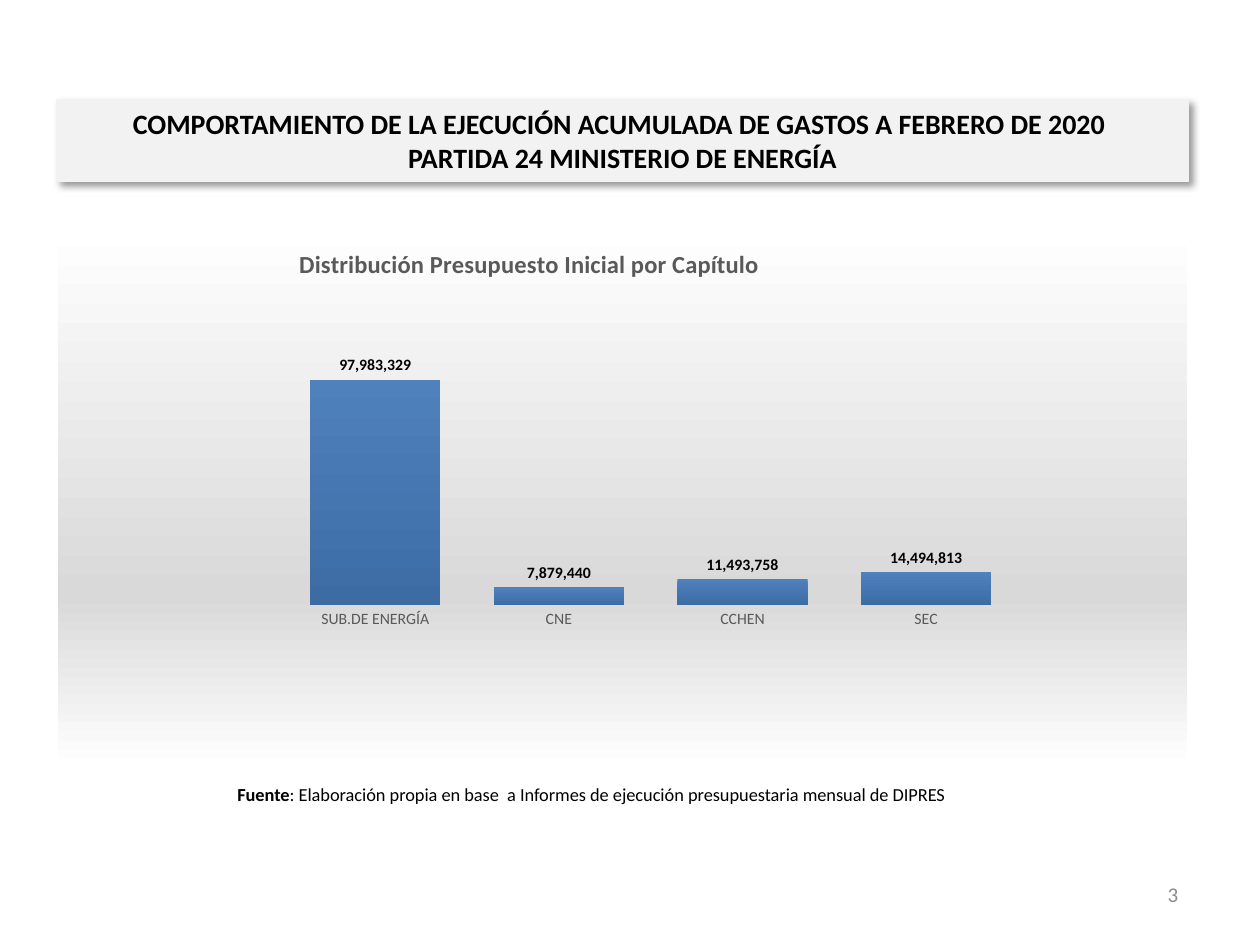
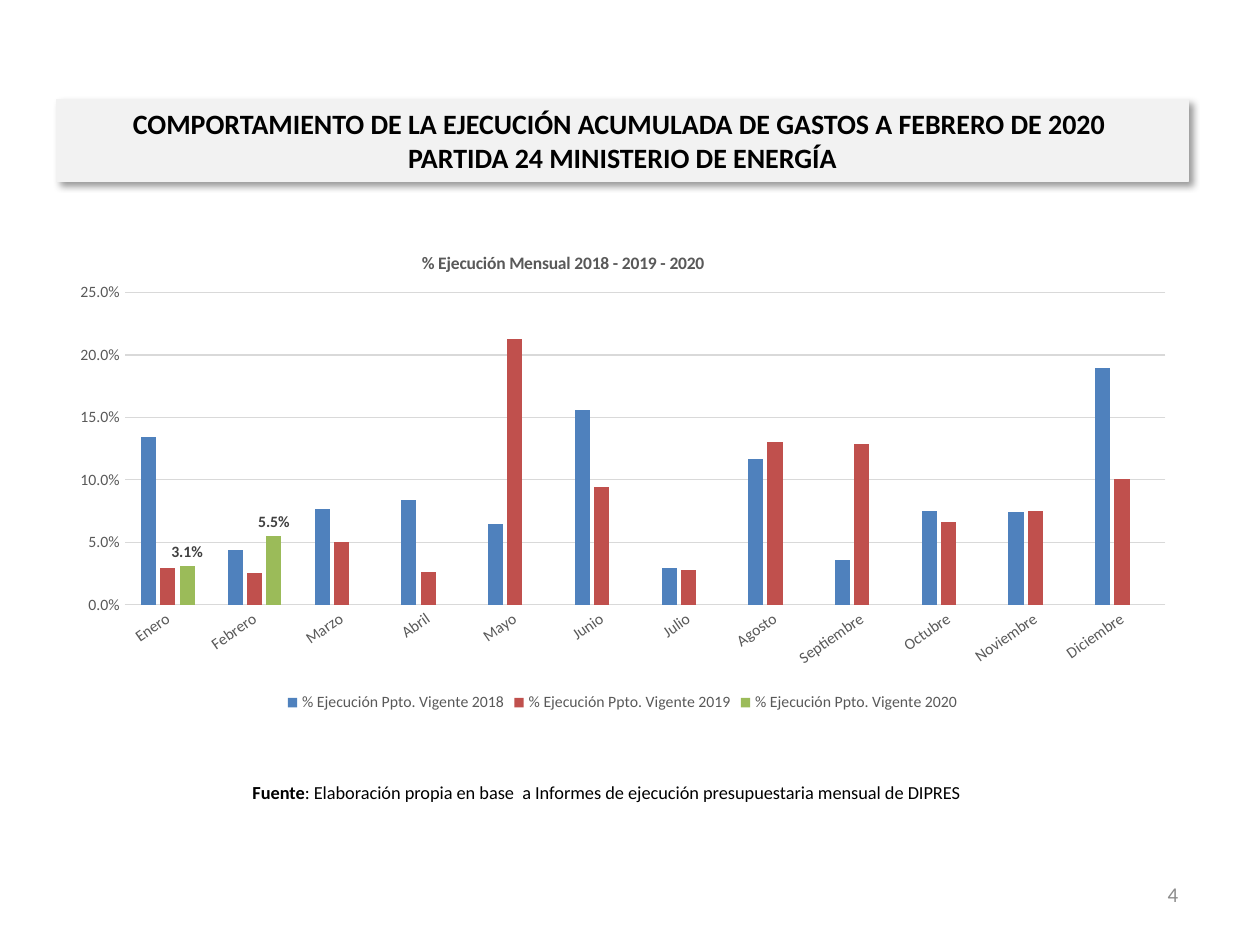
from lxml import etree
from pptx import Presentation
from pptx.chart.data import CategoryChartData
from pptx.dml.color import RGBColor
from pptx.enum.chart import XL_CHART_TYPE as ChartType
from pptx.enum.chart import XL_LABEL_POSITION as LabelPosition
from pptx.enum.chart import XL_LEGEND_POSITION as LegendPosition
from pptx.enum.chart import XL_TICK_MARK as TickMark
from pptx.enum.shapes import MSO_SHAPE as Shape
from pptx.enum.text import MSO_ANCHOR as Anchor
from pptx.enum.text import PP_ALIGN as Align
from pptx.oxml import parse_xml
from pptx.oxml.ns import qn
from pptx.util import Inches, Pt

FONT = "Calibri"
BLACK, GRAY, GRID, BAND = "000000", "595959", "D9D9D9", "F2F2F2"
BLUE, DARK_BLUE, RED, GREEN = "4F81BD", "3D6CA4", "C0504D", "9BBB59"
LEFT, WIDTH = 0.45, 8.98
NAMESPACES = ('xmlns:a="http://schemas.openxmlformats.org/drawingml/2006/main" '
              'xmlns:c="http://schemas.openxmlformats.org/drawingml/2006/chart"')

TITLE = ("COMPORTAMIENTO DE LA EJECUCIÓN ACUMULADA DE GASTOS A FEBRERO DE 2020 ",
         "PARTIDA 24 MINISTERIO DE ENERGÍA")
SOURCE = ("Fuente", ": Elaboración propia en base  a Informes de ejecución "
                    "presupuestaria mensual de DIPRES")

CHAPTERS = {"SUB.DE ENERGÍA": 97983329, "CNE": 7879440,
            "CCHEN": 11493758, "SEC": 14494813}
MONTHS = ["Enero", "Febrero", "Marzo", "Abril", "Mayo", "Junio", "Julio",
          "Agosto", "Septiembre", "Octubre", "Noviembre", "Diciembre"]
EXECUTION = {
    2018: [0.134, 0.044, 0.077, 0.084, 0.065, 0.156,
           0.029, 0.117, 0.036, 0.075, 0.074, 0.19],
    2019: [0.029, 0.025, 0.05, 0.026, 0.213, 0.094,
           0.028, 0.13, 0.129, 0.066, 0.075, 0.101],
    2020: [0.031, 0.055] + [None] * 10,
}


def color(value):
    return RGBColor.from_string(value)


class Deck:
    """Holds the shared style and the current slide."""

    def __init__(self):
        self.presentation = Presentation()
        self.presentation.slide_width = Inches(10)
        self.presentation.slide_height = Inches(7.5)
        self.slide = None

    # Style helpers
    def style(self, font, size, hex_color, bold=False):
        values = {"name": FONT, "size": Pt(size), "bold": bold}
        for name, value in values.items():
            setattr(font, name, value)
        font.color.rgb = color(hex_color)

    def line(self, line, hex_color):
        line.color.rgb = color(hex_color)
        line.width = Pt(0.75)

    def box(self, left, top, width, height):
        return [Inches(value) for value in (left, top, width, height)]

    def run(self, paragraph, text, size, hex_color, bold=False):
        run = paragraph.add_run()
        run.text = text
        self.style(run.font, size, hex_color, bold)

    # Slide frame: title band and page number
    def new_slide(self, number):
        self.slide = self.presentation.slides.add_slide(
            self.presentation.slide_layouts[6])
        self.text((7.12, 6.9, 2.33, 0.4), Align.RIGHT,
                  [(str(number), 12, "8C8C8C")])
        self.title_band()

    def title_band(self):
        band = self.slide.shapes.add_shape(
            Shape.RECTANGLE, *self.box(LEFT, 0.79, WIDTH, 0.65))
        band.fill.solid()
        band.fill.fore_color.rgb = color(BAND)
        self.line(band.line, BAND)
        band.shadow.inherit = False
        effects = band._element.spPr.find(qn("a:effectLst"))
        effects.append(parse_xml(
            f'<a:outerShdw {NAMESPACES} blurRad="{Pt(4)}" dist="{Pt(3)}" '
            'dir="2700000" algn="tl" rotWithShape="0"><a:srgbClr val="000000">'
            '<a:alpha val="40000"/></a:srgbClr></a:outerShdw>'))
        band.text_frame.word_wrap = True
        band.text_frame.vertical_anchor = Anchor.MIDDLE
        paragraph = band.text_frame.paragraphs[0]
        paragraph.alignment = Align.CENTER
        self.run(paragraph, TITLE[0], 16, BLACK, True)
        paragraph.add_line_break()
        self.run(paragraph, TITLE[1], 16, BLACK, True)

    def text(self, place, alignment, runs):
        frame = self.slide.shapes.add_textbox(*self.box(*place)).text_frame
        frame.word_wrap = True
        frame.vertical_anchor = Anchor.MIDDLE
        paragraph = frame.paragraphs[0]
        paragraph.alignment = alignment
        for run in runs:
            self.run(paragraph, *run)

    def source_note(self, top, width):
        self.text((0.98, top, width, 0.4), Align.CENTER,
                  [(SOURCE[0], 10.5, BLACK, True), (SOURCE[1], 10.5, BLACK)])

    # Charts
    def layout(self, parent, index, inner=False, **fractions):
        for old in parent.findall(qn("c:layout")):
            parent.remove(old)
        layout = parse_xml(f"<c:layout {NAMESPACES}><c:manualLayout/></c:layout>")
        settings = {"layoutTarget": "inner"} if inner else {}
        settings |= {"xMode": "edge", "yMode": "edge"} | fractions
        for name, value in settings.items():
            etree.SubElement(layout[0], qn(f"c:{name}")).set("val", str(value))
        parent.insert(index, layout)

    def column_chart(self, place, categories, series, number_format, title,
                     title_size, title_at, plot_at, gap, overlap=0):
        data = CategoryChartData(number_format=number_format)
        data.categories = categories
        for name, values in series.items():
            data.add_series(name, values)
        chart = self.slide.shapes.add_chart(
            ChartType.COLUMN_CLUSTERED, *self.box(*place), data).chart
        self.style(chart.font, 10, BLACK)
        chart.has_legend = False
        chart.has_title = True
        self.run(chart.chart_title.text_frame.paragraphs[0],
                 title, title_size, GRAY, True)
        self.layout(chart.chart_title._element, 1, x=title_at[0], y=title_at[1])
        self.layout(chart._chartSpace.chart.plotArea, 0, inner=True,
                    **dict(zip("xywh", plot_at)))
        plot = chart.plots[0]
        for name, value in {"gap_width": gap, "overlap": overlap,
                            "vary_by_categories": False}.items():
            setattr(plot, name, value)
        for axis in (chart.category_axis, chart.value_axis):
            axis.major_tick_mark = axis.minor_tick_mark = TickMark.NONE
            axis.format.line.fill.background()
            self.style(axis.tick_labels.font, 9, GRAY)
        axis.has_major_gridlines = False
        axis.minimum_scale = 0
        axis.tick_labels.number_format = number_format
        axis.tick_labels.number_format_is_linked = False
        return chart

    def value_labels(self, series, number_format, hex_color):
        labels = series.data_labels
        for name, value in {"show_value": True, "number_format": number_format,
                            "number_format_is_linked": False,
                            "position": LabelPosition.OUTSIDE_END}.items():
            setattr(labels, name, value)
        self.style(labels.font, 9, hex_color, True)

    def chart_background(self, chart, stops):
        stop_xml = "".join(
            f'<a:gs pos="{position * 1000}"><a:srgbClr val="{value}"/></a:gs>'
            for position, value in stops)
        chart._chartSpace.chart.addnext(parse_xml(
            f"<c:spPr {NAMESPACES}><a:gradFill><a:gsLst>{stop_xml}</a:gsLst>"
            '<a:lin ang="5400000" scaled="0"/></a:gradFill><a:ln w="9525">'
            '<a:solidFill><a:srgbClr val="FFFFFF"/></a:solidFill></a:ln></c:spPr>'))

    def legend(self, chart):
        chart.has_legend = True
        chart.legend.position = LegendPosition.BOTTOM
        chart.legend.include_in_layout = False
        self.style(chart.legend.font, 9, GRAY)


def budget_slide(deck):
    deck.new_slide(3)
    deck.source_note(6.1, 7.43)
    chart = deck.column_chart(
        (LEFT, 1.79, WIDTH, 4.31), list(CHAPTERS),
        {"Presupuesto Inicial": list(CHAPTERS.values())}, "#,##0",
        "Distribución Presupuesto Inicial por Capítulo", 14,
        title_at=(0.21, 0.03), plot_at=(0.2, 0.19, 0.65, 0.51), gap=41)
    deck.chart_background(chart, [(0, "FFFFFF"), (68, GRID), (100, "FFFFFF")])
    chart.value_axis.maximum_scale = 120000000
    chart.value_axis.visible = False
    series = chart.plots[0].series[0]
    fill = series.format.fill
    fill.gradient()
    fill.gradient_angle = 270
    for stop, value in zip(fill.gradient_stops, (BLUE, DARK_BLUE)):
        stop.color.rgb = color(value)
    deck.value_labels(series, "#,##0", BLACK)


def monthly_slide(deck):
    deck.new_slide(4)
    deck.source_note(6.09, 7.67)
    chart = deck.column_chart(
        (LEFT, 1.82, WIDTH, 3.87), MONTHS,
        {f"% Ejecución Ppto. Vigente {year}": values
         for year, values in EXECUTION.items()}, "0.0%",
        "% Ejecución Mensual 2018 - 2019 - 2020", 10,
        title_at=(0.32, 0.04), plot_at=(0.06, 0.13, 0.92, 0.64),
        gap=219, overlap=-27)
    deck.legend(chart)
    # Axes: slanted months, light gridlines
    deck.line(chart.category_axis.format.line, GRID)
    month_text = chart.category_axis._element.find(qn("c:txPr"))
    month_text.find(qn("a:bodyPr")).set("rot", "-2100000")
    axis = chart.value_axis
    axis.maximum_scale = 0.25
    axis.major_unit = 0.05
    axis.has_major_gridlines = True
    deck.line(axis.major_gridlines.format.line, GRID)
    # Series colours, labels on the current year
    for series, value in zip(chart.plots[0].series, (BLUE, RED, GREEN)):
        series.format.fill.solid()
        series.format.fill.fore_color.rgb = color(value)
    deck.value_labels(series, "0.0%", "404040")


def main():
    deck = Deck()
    budget_slide(deck)
    monthly_slide(deck)
    deck.presentation.save("out.pptx")


if __name__ == "__main__":
    main()
